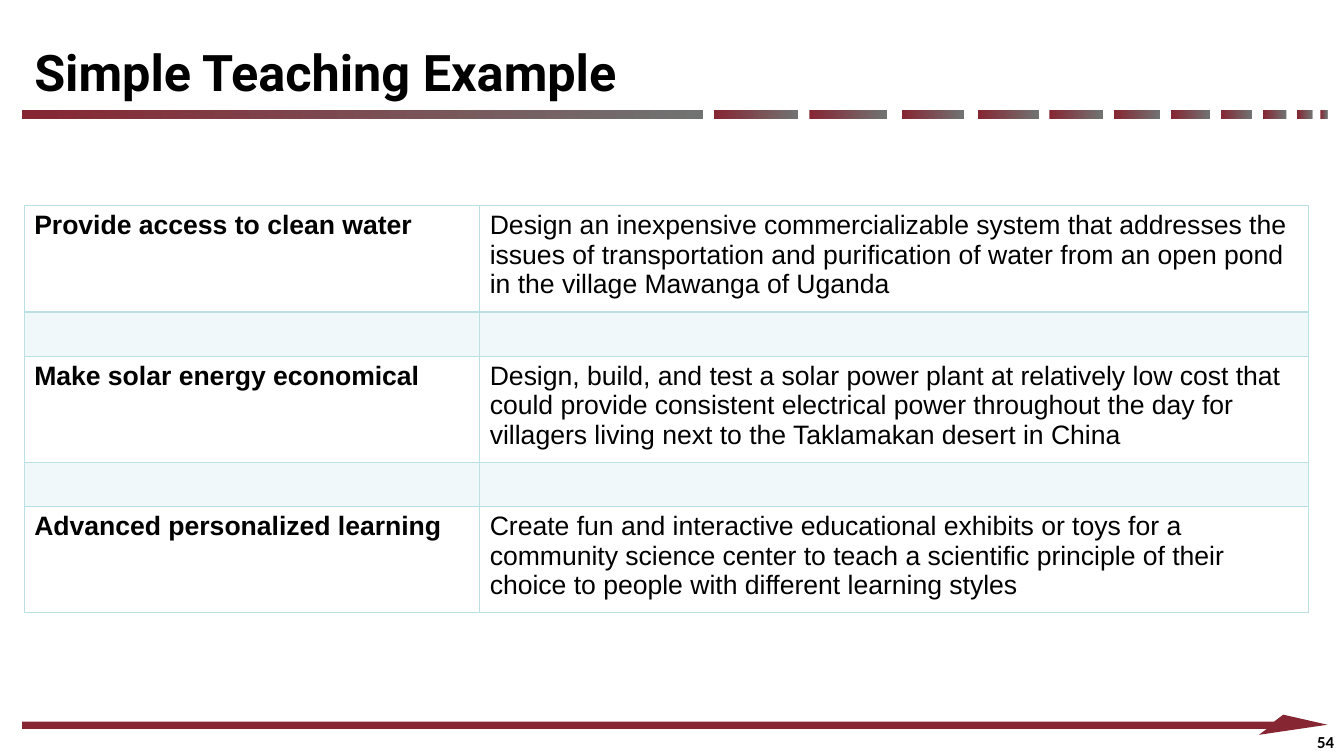
from lxml.etree import SubElement
from pptx import Presentation
from pptx.dml.color import RGBColor
from pptx.enum.shapes import MSO_SHAPE
from pptx.enum.text import MSO_ANCHOR, MSO_AUTO_SIZE, PP_ALIGN
from pptx.oxml import parse_xml
from pptx.oxml.ns import nsdecls, qn
from pptx.util import Pt

# Content
TITLE = "Simple Teaching Example"
PAGE_NUMBER = "54"
CHALLENGES = [
    ("Provide access to clean water",
     "Design an inexpensive commercializable system that addresses the issues of "
     "transportation and purification of water from an open pond in the village "
     "Mawanga of Uganda"),
    ("Make solar energy economical",
     "Design, build, and test a solar power plant at relatively low cost that could "
     "provide consistent electrical power throughout the day for villagers living "
     "next to the Taklamakan desert in China"),
    ("Advanced personalized learning",
     "Create fun and interactive educational exhibits or toys for a community science "
     "center to teach a scientific principle of their choice to people with different "
     "learning styles"),
]
COLORS = {"maroon": "862633", "gray": "707372", "aqua": "BBE0E3", "black": "000000"}

# Layout, in points
DASHES = [  # left, width
    (15.84, 486.7), (509.8, 60.5), (578.2, 55.4), (644.4, 43.9), (698.4, 43.9),
    (749.5, 38.2), (795.6, 33.1), (836.6, 27.4), (871.9, 22.3), (902.2, 16.6),
    (926.6, 10.8), (943.2, 5),
]
DASH_TOP, DASH_HEIGHT = 78.5, 6.5
ARROW = [(948.2, 517.7), (916.6, 510.5), (910.1, 515.5), (15.84, 515.5),
         (15.84, 520.6), (905, 520.6), (899.3, 524.9)]
TABLE_LEFT, TABLE_TOP = 17.28, 147
COLUMN_WIDTHS = (325.4, 591.9)
TEXT_ROW, GAP_ROW = 75.7, 31.8


def rgb(name):
    return RGBColor.from_string(COLORS[name])


def add_run(paragraph, text, font_name, size, bold=True):
    run = paragraph.add_run()
    run.text = text
    run.font.name, run.font.size, run.font.bold = font_name, Pt(size), bold
    run.font.color.rgb = rgb("black")


def add_borders(cell, widths):
    properties = cell._tc.get_or_add_tcPr()
    for position, (side, width) in enumerate(widths.items()):
        properties.insert(position, parse_xml(
            f'<a:ln{side} {nsdecls("a")} w="{Pt(width)}"><a:solidFill>'
            f'<a:srgbClr val="{COLORS["aqua"]}"/></a:solidFill></a:ln{side}>'))


def tint(cell):
    cell.fill.solid()
    cell.fill.fore_color.rgb = rgb("aqua")
    color = cell._tc.tcPr.find(qn("a:solidFill")).find(qn("a:srgbClr"))
    SubElement(color, qn("a:alpha")).set("val", "20000")


presentation = Presentation()
presentation.slide_width, presentation.slide_height = Pt(960), Pt(540)
slide = presentation.slides.add_slide(presentation.slide_layouts[5])
shapes = slide.shapes

# Dashed rule under the title
for left, width in DASHES:
    dash = shapes.add_shape(MSO_SHAPE.RECTANGLE, Pt(left), Pt(DASH_TOP),
                            Pt(width), Pt(DASH_HEIGHT))
    dash.shadow.inherit = False
    dash.line.fill.background()
    dash.fill.gradient()
    dash.fill.gradient_angle = 0
    for stop, position, name in zip(dash.fill.gradient_stops, (0, 1), ("maroon", "gray")):
        stop.position = position
        stop.color.rgb = rgb(name)

# Footer arrow
points = [(Pt(x), Pt(y)) for x, y in ARROW]
outline = shapes.build_freeform(*points[0], scale=1.0)
outline.add_line_segments(points[1:], close=True)
arrow = outline.convert_to_shape()
arrow.shadow.inherit = False
arrow.line.fill.background()
arrow.fill.solid()
arrow.fill.fore_color.rgb = rgb("maroon")

# Page number
page_number = shapes.add_textbox(Pt(900), Pt(519), Pt(60), Pt(21.6)).text_frame
page_number.word_wrap = True
page_number.paragraphs[0].alignment = PP_ALIGN.RIGHT
add_run(page_number.paragraphs[0], PAGE_NUMBER, "Calibri", 12)

# Challenges table, with a tinted gap row between challenges
row_count = 2 * len(CHALLENGES) - 1
heights = [GAP_ROW if row % 2 else TEXT_ROW for row in range(row_count)]
table = shapes.add_table(row_count, 2, Pt(TABLE_LEFT), Pt(TABLE_TOP),
                         Pt(sum(COLUMN_WIDTHS)), Pt(sum(heights))).table
table.first_row = table.horz_banding = False
for column, width in zip(table.columns, COLUMN_WIDTHS):
    column.width = Pt(width)
for row_index, height in enumerate(heights):
    table.rows[row_index].height = Pt(height)
    for column_index in range(2):
        cell = table.cell(row_index, column_index)
        if row_index % 2:
            tint(cell)
        else:
            cell.fill.background()
            add_run(cell.text_frame.paragraphs[0],
                    CHALLENGES[row_index // 2][column_index],
                    "Arial", 19, bold=column_index == 0)
        add_borders(cell, {"L": 1, "R": 1, "T": 2 if row_index == 1 else 1,
                           "B": 2 if row_index == 0 else 1})

# Title
title = shapes.title
title.left, title.top, title.width, title.height = Pt(17.28), Pt(31), Pt(931.7), Pt(41)
heading = title.text_frame
heading.auto_size = MSO_AUTO_SIZE.NONE
heading.vertical_anchor = MSO_ANCHOR.TOP
heading.paragraphs[0].alignment = PP_ALIGN.LEFT
heading.paragraphs[0].line_spacing = 0.9
add_run(heading.paragraphs[0], TITLE, "Roboto", 36)

presentation.save("out.pptx")
